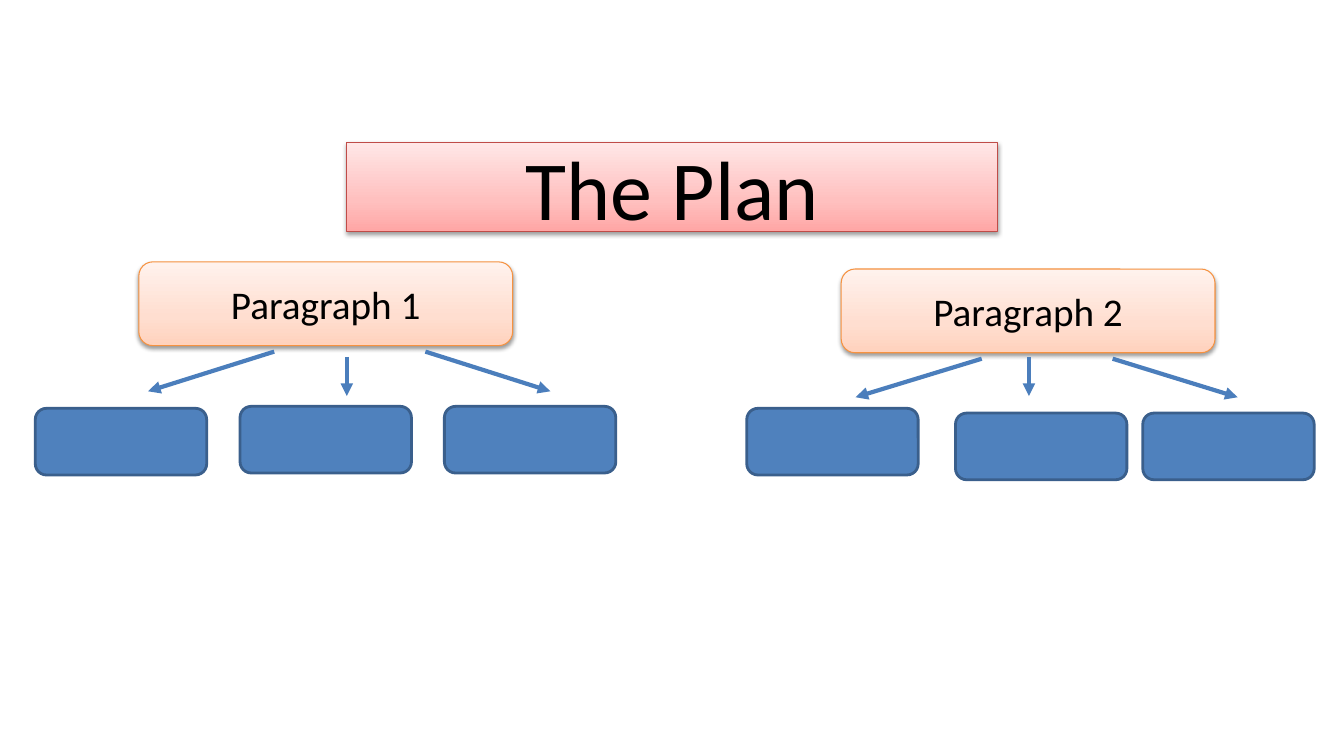
from copy import deepcopy
from dataclasses import dataclass
from typing import Any

from lxml.etree import SubElement
from pptx import Presentation
from pptx.dml.color import RGBColor
from pptx.enum.shapes import MSO_CONNECTOR, MSO_SHAPE
from pptx.enum.text import MSO_ANCHOR, MSO_AUTO_SIZE, PP_ALIGN
from pptx.oxml.ns import qn
from pptx.util import Cm, Pt

COLORS = {
    "title_line": "BF4C48",
    "paragraph_line": "F69240",
    "box": "4F81BD",
    "box_line": "3A5F8C",
    "arrow": "4B7EBC",
    "text": "000000",
    "shadow": "000000",
}
GRADIENTS = {
    "title": ("FFA6A5", "FFC0BF", "FFE7E7"),
    "paragraph": ("FFD2BD", "FFDED0", "FFF2ED"),
}
STOPS = (0, 0.35, 1)
FRAME = {
    "word_wrap": True,
    "auto_size": MSO_AUTO_SIZE.NONE,
    "vertical_anchor": MSO_ANCHOR.MIDDLE,
}
BOX_W, BOX_H = 4.32, 1.68


@dataclass
class Arrow:
    x1: float
    y1: float
    x2: float
    y2: float


@dataclass
class Branch:
    label: str
    left: float
    top: float
    boxes: list[tuple[float, float]]
    arrows: list[Arrow]


BRANCHES = [
    Branch(
        "Paragraph 1", 3.5, 6.6,
        [(0.89, 10.29), (6.05, 10.24), (11.2, 10.24)],
        [Arrow(6.91, 8.86, 3.73, 9.86), Arrow(8.74, 8.99, 8.74, 9.98),
         Arrow(10.72, 8.86, 13.87, 9.86)],
    ),
    Branch(
        "Paragraph 2", 21.2, 6.78,
        [(18.82, 10.29), (24.08, 10.41), (28.8, 10.41)],
        [Arrow(24.74, 9.04, 21.56, 10.01), Arrow(25.93, 8.99, 25.93, 9.98),
         Arrow(28.04, 9.04, 31.19, 10.01)],
    ),
]


def rgb(name: str) -> RGBColor:
    return RGBColor.from_string(COLORS[name])


def apply(obj: Any, values: dict[str, Any]) -> None:
    for name, value in values.items():
        setattr(obj, name, value)


def set_line(sp: Any, color: str, width: float) -> None:
    sp.line.color.rgb = rgb(color)
    sp.line.width = Pt(width)


def style_card(sp: Any, kind: str, text: str, size: int) -> None:
    sp.fill.gradient()
    sp.fill.gradient_angle = 90
    stops = sp._element.spPr.find(qn("a:gradFill")).find(qn("a:gsLst"))
    stops.append(deepcopy(stops[-1]))
    for stop, position, color in zip(sp.fill.gradient_stops, STOPS, GRADIENTS[kind]):
        apply(stop, {"position": position})
        stop.color.rgb = RGBColor.from_string(color)
    set_line(sp, f"{kind}_line", 0.75)

    sp.shadow.inherit = False
    effects = sp._element.spPr.find(qn("a:effectLst"))
    shadow = SubElement(effects, qn("a:outerShdw"), blurRad="40000", dist="20000",
                        dir="5400000", rotWithShape="0")
    color = SubElement(shadow, qn("a:srgbClr"), val=COLORS["shadow"])
    SubElement(color, qn("a:alpha"), val="38000")

    tf = sp.text_frame
    apply(tf, FRAME)
    p = tf.paragraphs[0]
    p.alignment = PP_ALIGN.CENTER
    r = p.add_run()
    r.text = text
    apply(r.font, {"name": "Calibri", "size": Pt(size)})
    r.font.color.rgb = rgb("text")


def add_box(s: Any, left: float, top: float) -> None:
    sp = s.shapes.add_shape(MSO_SHAPE.ROUNDED_RECTANGLE,
                            Cm(left), Cm(top), Cm(BOX_W), Cm(BOX_H))
    sp.shadow.inherit = False
    sp.fill.solid()
    sp.fill.fore_color.rgb = rgb("box")
    set_line(sp, "box_line", 2)


def add_arrow(s: Any, arrow: Arrow) -> None:
    cxn = s.shapes.add_connector(MSO_CONNECTOR.STRAIGHT, Cm(arrow.x1), Cm(arrow.y1),
                                 Cm(arrow.x2), Cm(arrow.y2))
    set_line(cxn, "arrow", 3)
    SubElement(cxn.line._get_or_add_ln(), qn("a:tailEnd"), type="triangle")
    SubElement(cxn._element.spPr, qn("a:effectLst"))


def add_branch(s: Any, branch: Branch) -> None:
    sp = s.shapes.add_shape(MSO_SHAPE.ROUNDED_RECTANGLE,
                            Cm(branch.left), Cm(branch.top), Cm(9.42), Cm(2.11))
    style_card(sp, "paragraph", branch.label, 28)
    for left, top in branch.boxes:
        add_box(s, left, top)
    for arrow in branch.arrows:
        add_arrow(s, arrow)


def main() -> None:
    prs = Presentation()
    apply(prs, {"slide_width": Cm(33.87), "slide_height": Cm(19.05)})
    s = prs.slides.add_slide(prs.slide_layouts[5])
    title = s.shapes.title
    apply(title, {"left": Cm(8.74), "top": Cm(3.58),
                  "width": Cm(16.41), "height": Cm(2.26)})
    style_card(title, "title", "The Plan", 60)
    for branch in BRANCHES:
        add_branch(s, branch)
    prs.save("out.pptx")


if __name__ == "__main__":
    main()
